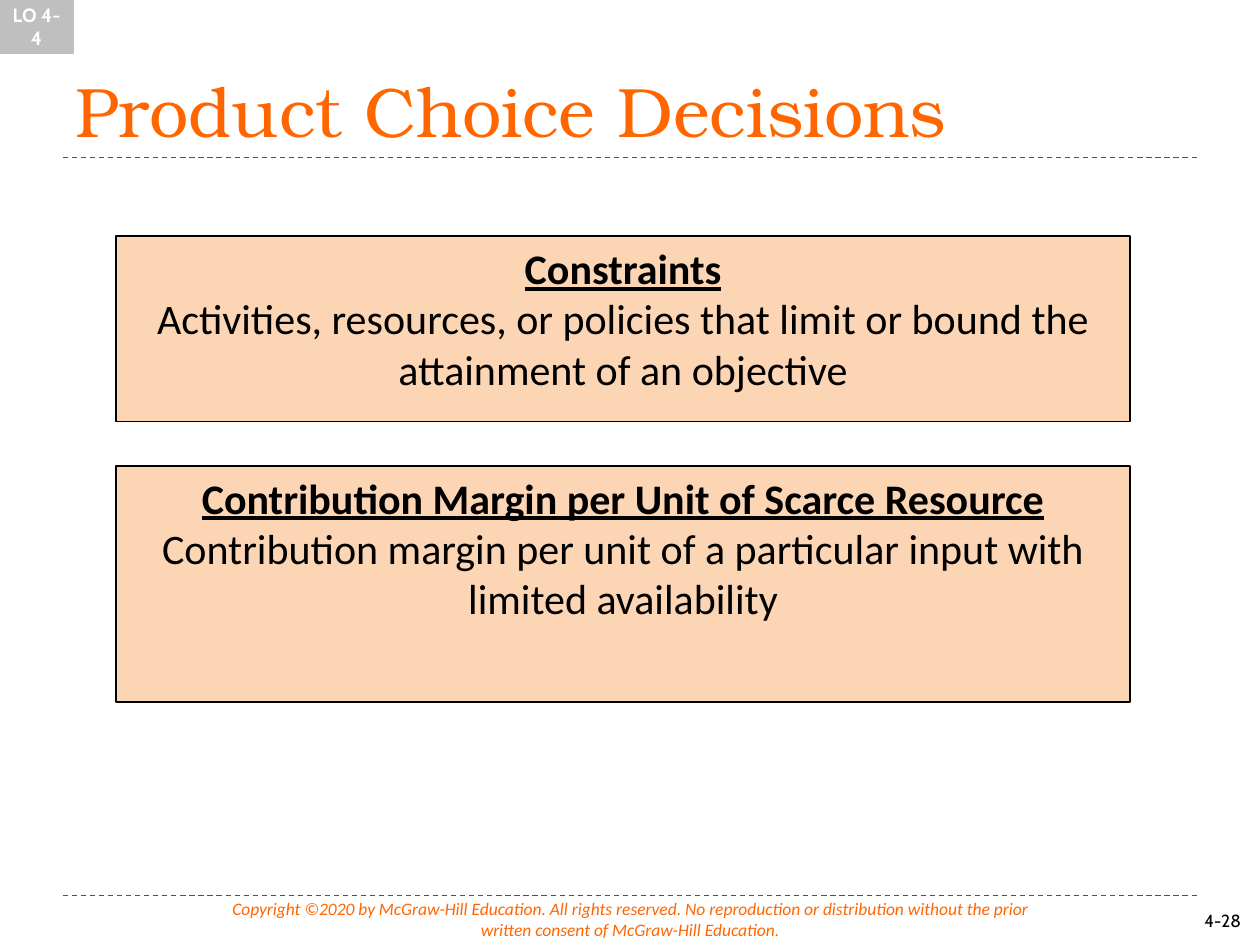
from pptx import Presentation
from pptx.dml.color import RGBColor as Rgb
from pptx.enum.dml import MSO_LINE as Dash
from pptx.enum.shapes import MSO_CONNECTOR as Conn, MSO_SHAPE as Shape
from pptx.enum.text import MSO_ANCHOR as Anchor, PP_ALIGN as Align
from pptx.oxml.ns import qn
from pptx.util import Inches, Pt
from lxml.etree import SubElement as Sub

HUES = {"rule": "0064C8", "accent": "FF6600", "card": "FCD5B5",
        "tag": "BFBFBF", "ink": "000000", "white": "FFFFFF"}
WIDE, HIGH = 10, 7.5
LEFT, SPAN = 0.05, 0.9
CARDS = [
    (0.25, 0.196, "Constraints",
     "Activities, resources, or policies that limit or bound the "
     "attainment of an objective"),
    (0.493, 0.25, "Contribution Margin per Unit of Scarce Resource",
     "Contribution margin per unit of a particular input with "
     "limited availability"),
]


def hue(name):
    return Rgb.from_string(HUES[name])


def place(box):
    x, y, w, h = box
    return Inches(x * WIDE), Inches(y * HIGH), Inches(w * WIDE), Inches(h * HIGH)


def write(para, text, size, face, tint, align=Align.LEFT, **style):
    para.text = text
    para.alignment = align
    font = para.font
    font.size, font.name = Pt(size), face
    font.color.rgb = hue(tint)
    for key, value in style.items():
        setattr(font, key, value)


def label(slide, box, anchor, *args, **style):
    frame = slide.shapes.add_textbox(*place(box)).text_frame
    frame.word_wrap = True
    frame.vertical_anchor = anchor
    write(frame.paragraphs[0], *args, **style)


def panel(slide, box, fill, edge, width, anchor):
    shape = slide.shapes.add_shape(Shape.RECTANGLE, *place(box))
    shape.shadow.inherit = False
    shape.fill.solid()
    shape.fill.fore_color.rgb = hue(fill)
    shape.line.color.rgb = hue(edge)
    shape.line.width = Pt(width)
    frame = shape.text_frame
    frame.word_wrap = True
    frame.vertical_anchor = anchor
    return frame


def rule(slide, y):
    x, top, w, _ = place((LEFT, y, SPAN, 0))
    line = slide.shapes.add_connector(Conn.STRAIGHT, x, top, x + w, top)
    line.line.color.rgb = hue("rule")
    line.line.width = Pt(0.75)
    line.line.dash_style = Dash.DASH
    Sub(line._element.spPr, qn("a:effectLst"))


def header(slide, box):
    x, y, w, h = box
    rule(slide, y + h)
    label(slide, box, Anchor.BOTTOM, "Product Choice Decisions",
          40, "TeX Gyre Bonum", "accent")


def footer(slide, box):
    x, y, w, h = box
    rule(slide, y)
    label(slide, (0.946, y + 0.008, 0.05, 0.033), Anchor.TOP,
          "4-28", 10, "Cabin", "ink")
    label(slide, (1 / 6, y - 0.004, 2 / 3, h), Anchor.TOP,
          "Copyright ©2020 by McGraw-Hill Education. All rights reserved. "
          "No reproduction or distribution without the prior written "
          "consent of McGraw-Hill Education.",
          10, "Calibri", "accent", Align.CENTER, italic=True)


def card(slide, box, term, text):
    frame = panel(slide, box, "card", "ink", 1, Anchor.TOP)
    write(frame.paragraphs[0], term, 24, "Calibri", "ink", Align.CENTER,
          bold=True, underline=True)
    write(frame.add_paragraph(), text, 24, "Calibri", "ink", Align.CENTER)


def tag(slide, box):
    frame = panel(slide, box, "tag", "tag", 1.5, Anchor.MIDDLE)
    write(frame.paragraphs[0], "LO 4-4", 11, "Cabin", "white", Align.CENTER,
          bold=True)


def main():
    deck = Presentation()
    deck.slide_width, deck.slide_height = Inches(WIDE), Inches(HIGH)
    slide = deck.slides.add_slide(deck.slide_layouts[6])
    footer(slide, (LEFT, 0.948, SPAN, 0.058))
    header(slide, (LEFT, 1 / 30, SPAN, 2 / 15))
    for top, tall, term, text in CARDS:
        card(slide, (0.092, top, 0.805, tall), term, text)
    tag(slide, (0, 0, 0.058, 0.056))
    deck.save("out.pptx")


if __name__ == "__main__":
    main()
